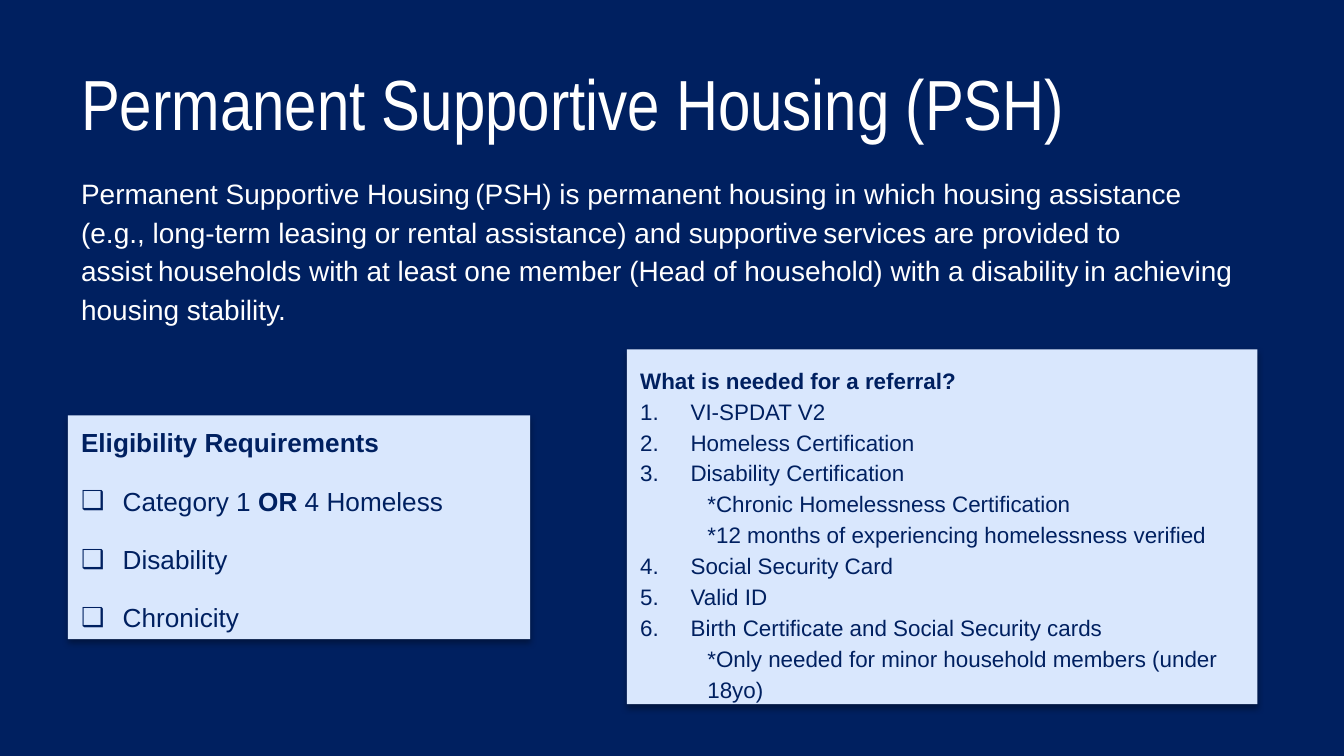
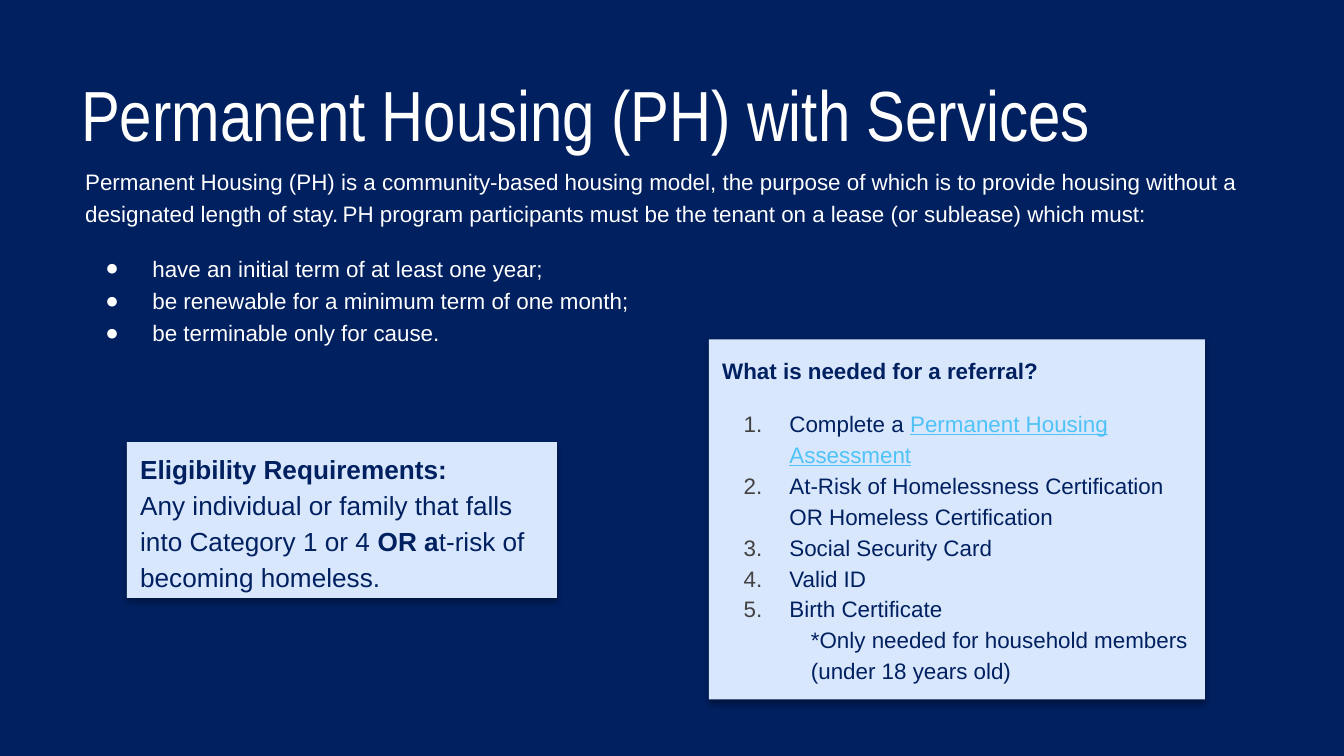
"""Build two slides on permanent housing programmes."""
from lxml import etree
from pptx import Presentation
from pptx import util as u
from pptx.dml.color import RGBColor
from pptx.enum import shapes, text
from pptx.oxml.ns import qn

PX = 4572
NAVY, WHITE, PANEL, GREY, LINK = "002060", "FFFFFF", "D9E7FD", "424242", "4FC3F7"
BOLD = {"bold": True}
NUMBER = "arabicPeriod"
NARROW = chr(0x202F)


def rgb(value):
    return RGBColor.from_string(value)


def child(parent, tag, **attrs):
    return etree.SubElement(parent, qn(tag), {k: str(v) for k, v in attrs.items()})


class Deck:
    def __init__(self, width, height):
        self.prs = Presentation()
        self.prs.slide_width, self.prs.slide_height = width * PX, height * PX
        self.slide = None

    def add_slide(self):
        self.slide = self.prs.slides.add_slide(self.prs.slide_layouts[6])
        fill = self.slide.background.fill
        fill.solid()
        fill.fore_color.rgb = rgb(NAVY)

    def frame(self, sp, inset, anchor=text.MSO_ANCHOR.TOP):
        tf = sp.text_frame
        tf.word_wrap = True
        tf.auto_size = text.MSO_AUTO_SIZE.NONE
        tf.vertical_anchor = anchor
        tf.margin_left = tf.margin_right = 20 * PX
        tf.margin_top = tf.margin_bottom = inset * PX
        return tf

    def text_box(self, at, anchor=text.MSO_ANCHOR.TOP):
        sp = self.slide.shapes.add_textbox(*(v * PX for v in at))
        return self.frame(sp, 20, anchor)

    def title(self, top, words):
        tf = self.text_box((101, top, 1798, 168), text.MSO_ANCHOR.BOTTOM)
        self.para(tf, [words], 38, WHITE, font="Arial Narrow", spacing=1.0)

    def panel(self, at, inset=20):
        sp = self.slide.shapes.add_shape(shapes.MSO_SHAPE.RECTANGLE, *(v * PX for v in at))
        sp.fill.solid()
        sp.fill.fore_color.rgb = rgb(PANEL)
        sp.line.fill.background()
        sp.shadow.inherit = False
        effects = sp._element.spPr.find(qn("a:effectLst"))
        shadow = child(effects, "a:outerShdw", blurRad=u.Pt(3.5), dist=u.Pt(2.2),
                       dir=90 * 60000, rotWithShape=0)
        child(child(shadow, "a:srgbClr", val="000000"), "a:alpha", val=32000)
        return self.frame(sp, inset)

    def para(self, tf, runs, size, color=NAVY, font="Arial", spacing=1.15, before=0,
             left=0, hang=0, bullet=None, bullet_color=None, level=0):
        p = tf.paragraphs[0]
        if p.runs:
            p = tf.add_paragraph()
        p.level = level
        p.alignment = text.PP_ALIGN.LEFT
        p.line_spacing = spacing
        p.space_before = u.Pt(before)
        pPr = p._p.get_or_add_pPr()
        pPr.set("marL", str(left * PX))
        pPr.set("indent", str(-hang * PX))
        if bullet:
            child(child(pPr, "a:buClr"), "a:srgbClr", val=bullet_color or color)
            child(pPr, "a:buFont", typeface="Arial")
            if bullet == NUMBER:
                child(pPr, "a:buAutoNum", type=NUMBER)
            else:
                child(pPr, "a:buChar", char=bullet)
        for run in runs:
            words, look = (run, {}) if isinstance(run, str) else run
            r = p.add_run()
            r.text = words
            r.font.name, r.font.size = font, u.Pt(size)
            r.font.bold = look.get("bold", False)
            r.font.underline = look.get("underline", False)
            r.font.color.rgb = rgb(look.get("color", color))

    def referral(self, at, items, left, hang, note_left, number_color, first_gap=0):
        tf = self.panel(at)
        self.para(tf, [("What is needed for a referral?", BOLD)], 12)
        for i, runs in enumerate(items):
            if runs[0].startswith("*"):
                self.para(tf, runs, 12, left=note_left, level=1)
            else:
                self.para(tf, runs, 12, left=left, hang=hang, bullet=NUMBER,
                          bullet_color=number_color, before=0 if i else first_gap)


def supportive_housing(deck):
    deck.add_slide()
    deck.title(67, "Permanent Supportive Housing (PSH)")
    intro = deck.text_box((101, 235, 1770, 230))
    deck.para(intro, [
        f"Permanent Supportive Housing{NARROW}(PSH) is permanent housing in which housing "
        "assistance (e.g., long-term leasing or rental assistance) and "
        f"supportive{NARROW}services are provided to assist{NARROW}households with at least "
        f"one member (Head of household) with a disability{NARROW}in achieving housing "
        "stability."], 15, WHITE)
    deck.referral((933, 520, 938, 528), [
        ["VI-SPDAT V2"],
        ["Homeless Certification"],
        ["Disability Certification"],
        ["*Chronic Homelessness Certification"],
        ["*12 months of experiencing homelessness verified"],
        ["Social Security Card"],
        ["Valid ID"],
        ["Birth Certificate and Social Security cards"],
        ["*Only needed for minor household members (under 18yo)"],
    ], left=75, hang=75, note_left=100, number_color=NAVY)
    eligibility = deck.panel((101, 618, 688, 333), inset=10)
    deck.para(eligibility, [("Eligibility Requirements", BOLD)], 14)
    for runs in (["Category 1 ", ("OR", BOLD), " 4 Homeless"], ["Disability"], ["Chronicity"]):
        deck.para(eligibility, runs, 14, before=12, left=62, hang=62, bullet="❑")


def housing_with_services(deck):
    deck.add_slide()
    deck.title(84, "Permanent Housing (PH) with Services")
    intro = deck.text_box((107, 222, 1762, 362))
    deck.para(intro, [
        "Permanent Housing (PH) is a community-based housing model, the purpose of which is to "
        f"provide housing without a designated length of stay.{NARROW}PH program participants "
        "must be the tenant on a lease (or sublease) which must:"], 12, WHITE, spacing=1.2)
    terms = ("have an initial term of at least one year;",
             "be renewable for a minimum term of one month;",
             "be terminable only for cause.")
    for i, term in enumerate(terms):
        deck.para(intro, [term], 12, WHITE, spacing=1.2, before=0 if i else 12,
                  left=100, hang=70, bullet="●")
    link = {"color": LINK, "underline": True}
    deck.referral((1055, 505, 738, 536), [
        ["Complete a ", ("Permanent Housing Assessment", link)],
        ["At-Risk of Homelessness Certification OR Homeless Certification"],
        ["Social Security Card"],
        ["Valid ID"],
        ["Birth Certificate"],
        ["*Only needed for household members (under 18 years old)"],
    ], left=100, hang=68, note_left=132, number_color=GREY, first_gap=12)
    eligibility = deck.panel((189, 658, 640, 232), inset=10)
    deck.para(eligibility, [("Eligibility Requirements:", BOLD)], 14)
    deck.para(eligibility, ["Any individual or family that falls into Category 1 or 4 ",
                            ("OR a", BOLD), "t-risk of becoming homeless."], 14)


def main():
    deck = Deck(2000, 1125)
    supportive_housing(deck)
    housing_with_services(deck)
    deck.prs.save("out.pptx")


if __name__ == "__main__":
    main()
